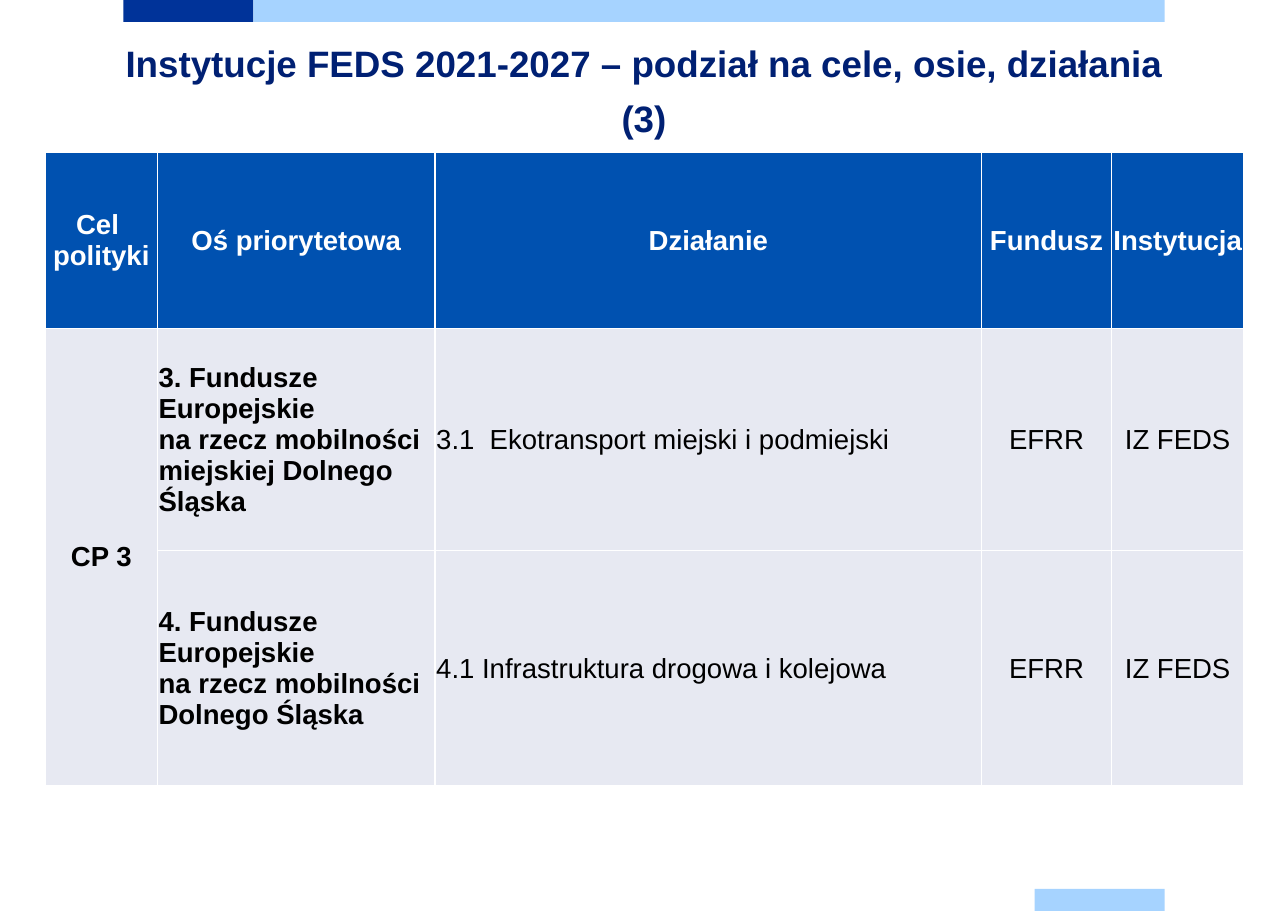
"""Build the slide listing FEDS 2021-2027 institutions for policy objective 3."""
from dataclasses import dataclass

from lxml import etree
from pptx import Presentation
from pptx import util as u
from pptx.dml.color import RGBColor
from pptx.enum import shapes, text
from pptx.oxml import ns

PX = u.Inches(1) // 100
FONT = "Arial"
NAVY = RGBColor(0x00, 0x33, 0x99)
SKY = RGBColor(0xA6, 0xD3, 0xFF)
TITLE_BLUE = RGBColor(0x00, 0x20, 0x73)
HEADER_BLUE = RGBColor(0x00, 0x51, 0xB0)
PALE = RGBColor(0xE7, 0xE9, 0xF2)
WHITE = RGBColor(0xFF, 0xFF, 0xFF)
BLACK = RGBColor(0x00, 0x00, 0x00)

CENTER = text.PP_ALIGN.CENTER
LEFT = text.PP_ALIGN.LEFT


@dataclass(frozen=True)
class Bar:
    left: int
    top: int
    width: int
    color: RGBColor
    height: int = 20


@dataclass(frozen=True)
class Column:
    heading: str
    width: int
    align: text.PP_ALIGN
    bold: bool


BARS = [Bar(112, 0, 118, NAVY), Bar(230, 0, 827, SKY), Bar(939, 807, 118, SKY)]
COLUMNS = [
    Column("Cel \npolityki", 102, CENTER, True),
    Column("Oś priorytetowa", 252, LEFT, True),
    Column("Działanie", 496, LEFT, False),
    Column("Fundusz", 118, CENTER, False),
    Column("Instytucja", 120, CENTER, False),
]
ROW_HEIGHTS = [160, 202, 213]
ROWS = [
    ["CP 3",
     "3. Fundusze Europejskie \vna rzecz mobilności miejskiej Dolnego Śląska",
     "3.1  Ekotransport miejski i podmiejski", "EFRR", "IZ FEDS"],
    ["",
     "4. Fundusze Europejskie \vna rzecz mobilności \vDolnego Śląska",
     "4.1 Infrastruktura drogowa i kolejowa", "EFRR", "IZ FEDS"],
]


def format_paragraph(paragraph, size: int, color: RGBColor, bold: bool, align) -> None:
    paragraph.alignment = align
    font = paragraph.font
    font.name, font.size, font.bold = FONT, u.Pt(size), bold
    font.color.rgb = color


def draw_bar(slide, bar: Bar) -> None:
    shape = slide.shapes.add_shape(
        shapes.MSO_SHAPE.RECTANGLE,
        bar.left * PX, bar.top * PX, bar.width * PX, bar.height * PX)
    shape.shadow.inherit = False
    shape.fill.solid()
    shape.fill.fore_color.rgb = bar.color
    shape.line.fill.background()


def place_title(slide) -> None:
    title = slide.shapes.title
    title.left, title.top, title.width, title.height = (
        length * PX for length in (112, 27, 945, 94))
    frame = title.text_frame
    frame.text = "Instytucje FEDS 2021-2027 – podział na cele, osie, działania (3)"
    frame.margin_left = frame.margin_right = frame.margin_top = frame.margin_bottom = 0
    frame.vertical_anchor = text.MSO_ANCHOR.TOP
    frame.auto_size = text.MSO_AUTO_SIZE.NONE
    frame.word_wrap = True
    paragraph = frame.paragraphs[0]
    paragraph.line_spacing = u.Pt(36)
    format_paragraph(paragraph, 24, TITLE_BLUE, True, CENTER)


def add_borders(cell) -> None:
    properties = cell._tc.get_or_add_tcPr()
    for index, side in enumerate(("lnL", "lnR", "lnT", "lnB")):
        line = etree.Element(ns.qn(f"a:{side}"), w=str(u.Pt(1)))
        fill = etree.SubElement(line, ns.qn("a:solidFill"))
        etree.SubElement(fill, ns.qn("a:srgbClr"), val=str(WHITE))
        properties.insert(index, line)


def fill_cell(cell, content: str, fill: RGBColor, color: RGBColor, bold: bool, align) -> None:
    cell.text_frame.text = content
    cell.margin_left = cell.margin_right = cell.margin_top = PX
    cell.margin_bottom = 0
    cell.vertical_anchor = text.MSO_ANCHOR.MIDDLE
    cell.fill.solid()
    cell.fill.fore_color.rgb = fill
    add_borders(cell)
    for paragraph in cell.text_frame.paragraphs:
        format_paragraph(paragraph, 18, color, bold, align)


def draw_table(slide) -> None:
    table = slide.shapes.add_table(
        len(ROW_HEIGHTS), len(COLUMNS), 41 * PX, 138 * PX,
        sum(column.width for column in COLUMNS) * PX, sum(ROW_HEIGHTS) * PX).table
    table.horz_banding = False
    for row, height in zip(table.rows, ROW_HEIGHTS):
        row.height = height * PX
    for index, column in enumerate(COLUMNS):
        table.columns[index].width = column.width * PX
        fill_cell(table.cell(0, index), column.heading, HEADER_BLUE, WHITE, True, CENTER)
        for row_index, row in enumerate(ROWS, start=1):
            fill_cell(table.cell(row_index, index), row[index],
                      PALE, BLACK, column.bold, column.align)
    table.cell(1, 0).merge(table.cell(2, 0))


def main() -> None:
    presentation = Presentation()
    presentation.slide_width, presentation.slide_height = 1169 * PX, 827 * PX
    slide = presentation.slides.add_slide(presentation.slide_layouts[5])
    for bar in BARS:
        draw_bar(slide, bar)
    draw_table(slide)
    place_title(slide)
    presentation.save("out.pptx")


if __name__ == "__main__":
    main()
